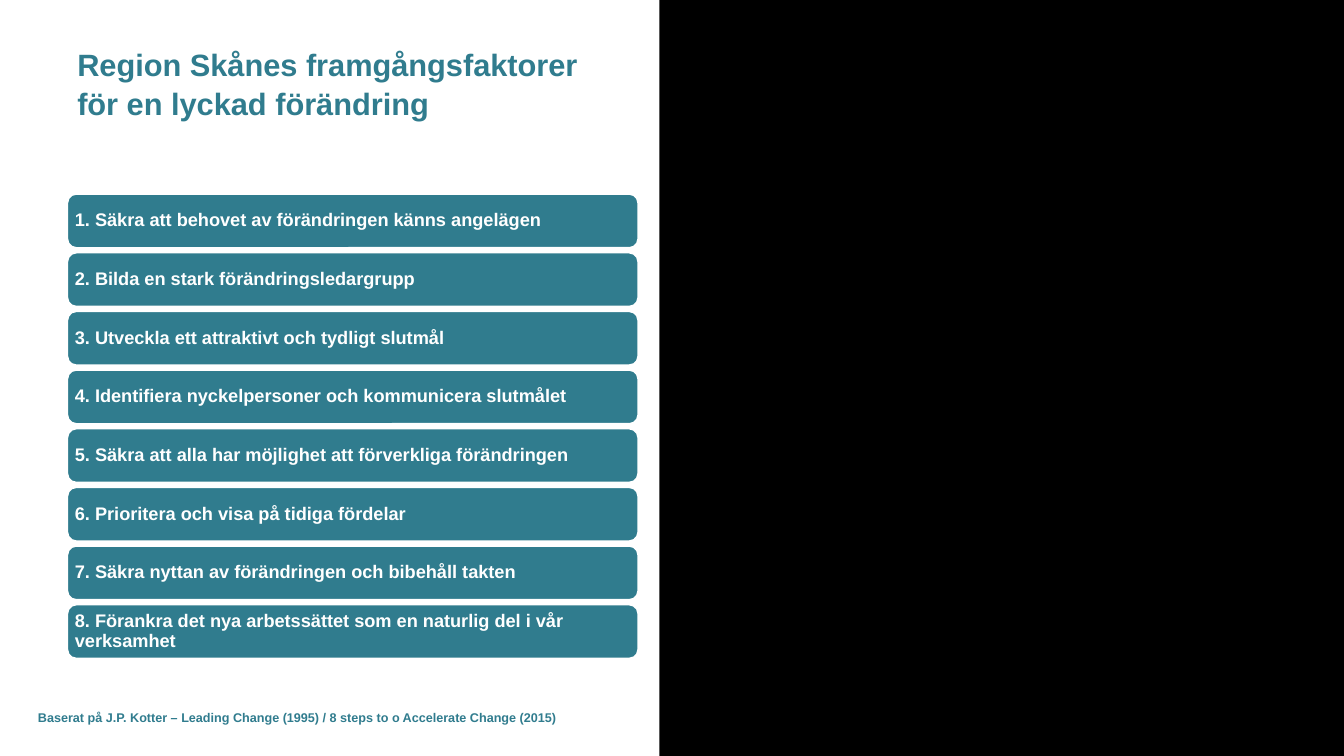
import pptx
import pptx.dml.color
import pptx.enum.shapes
import pptx.enum.text
import pptx.util
from dataclasses import dataclass

Pt = pptx.util.Pt
Kind = pptx.enum.shapes.MSO_SHAPE
Align = pptx.enum.text.PP_ALIGN
Anchor = pptx.enum.text.MSO_ANCHOR

HUES = {"back": "000000", "panel": "FFFFFF", "teal": "307C8E", "light": "FFFFFF"}

STEPS = [
    "Säkra att behovet av förändringen känns angelägen",
    "Bilda en stark förändringsledargrupp",
    "Utveckla ett attraktivt och tydligt slutmål",
    "Identifiera nyckelpersoner och kommunicera slutmålet",
    "Säkra att alla har möjlighet att förverkliga förändringen",
    "Prioritera och visa på tidiga fördelar",
    "Säkra nyttan av förändringen och bibehåll takten",
    "Förankra det nya arbetssättet som en naturlig del i vår verksamhet",
]
FIRST_TOP = 138.4
PITCH = 41.9


@dataclass(frozen=True)
class Box:
    left: float
    top: float
    width: float
    height: float

    def place(self) -> tuple:
        return Pt(self.left), Pt(self.top), Pt(self.width), Pt(self.height)


@dataclass(frozen=True)
class Step:
    text: str
    box: Box


def hue(name: str) -> pptx.dml.color.RGBColor:
    return pptx.dml.color.RGBColor.from_string(HUES[name])


def write(shape, text: str, size: float, color: str, lead: float, anchor) -> None:
    frame = shape.text_frame
    frame.text = text
    frame.word_wrap = True
    frame.auto_size = pptx.enum.text.MSO_AUTO_SIZE.NONE
    frame.vertical_anchor = anchor
    line = frame.paragraphs[0]
    line.alignment = Align.LEFT
    line.line_spacing = lead
    font = line.runs[0].font
    font.name = "Arial"
    font.size = Pt(size)
    font.bold = True
    font.color.rgb = hue(color)


def draw(slide, kind, box: Box, fill: str):
    shape = slide.shapes.add_shape(kind, *box.place())
    shape.shadow.inherit = False
    shape.fill.solid()
    shape.fill.fore_color.rgb = hue(fill)
    shape.line.fill.background()
    return shape


def draw_step(slide, step: Step) -> None:
    bar = draw(slide, Kind.ROUNDED_RECTANGLE, step.box, "teal")
    bar.line.color.rgb = hue("light")
    bar.line.width = Pt(1.5)
    write(bar, step.text, 13, "light", 0.9, Anchor.MIDDLE)
    frame = bar.text_frame
    frame.margin_left = frame.margin_right = Pt(3.6)
    frame.margin_top = frame.margin_bottom = Pt(3.6)


def main() -> None:
    deck = pptx.Presentation()
    deck.slide_width = Pt(960)
    deck.slide_height = Pt(540)
    slide = deck.slides.add_slide(deck.slide_layouts[5])
    slide.background.fill.solid()
    slide.background.fill.fore_color.rgb = hue("back")

    title = slide.shapes.title
    panel = draw(slide, Kind.RECTANGLE, Box(0, 0, 471, 540), "panel")
    title.element.addprevious(panel.element)
    title.left, title.top, title.width, title.height = Box(48, 28, 402.5, 90).place()
    write(title, "Region Skånes framgångsfaktorer för en lyckad förändring",
          22, "teal", 1.05, Anchor.TOP)

    for row, text in enumerate(STEPS):
        box = Box(48, FIRST_TOP + row * PITCH, 408, 38.8)
        draw_step(slide, Step(f"{row + 1}. {text}", box))

    note = slide.shapes.add_textbox(*Box(20, 502.5, 481, 18).place())
    write(note, "Baserat på J.P. Kotter – Leading Change (1995) / "
          "8 steps to o Accelerate Change (2015)", 9, "teal", 1.1, Anchor.TOP)

    deck.save("out.pptx")


if __name__ == "__main__":
    main()
